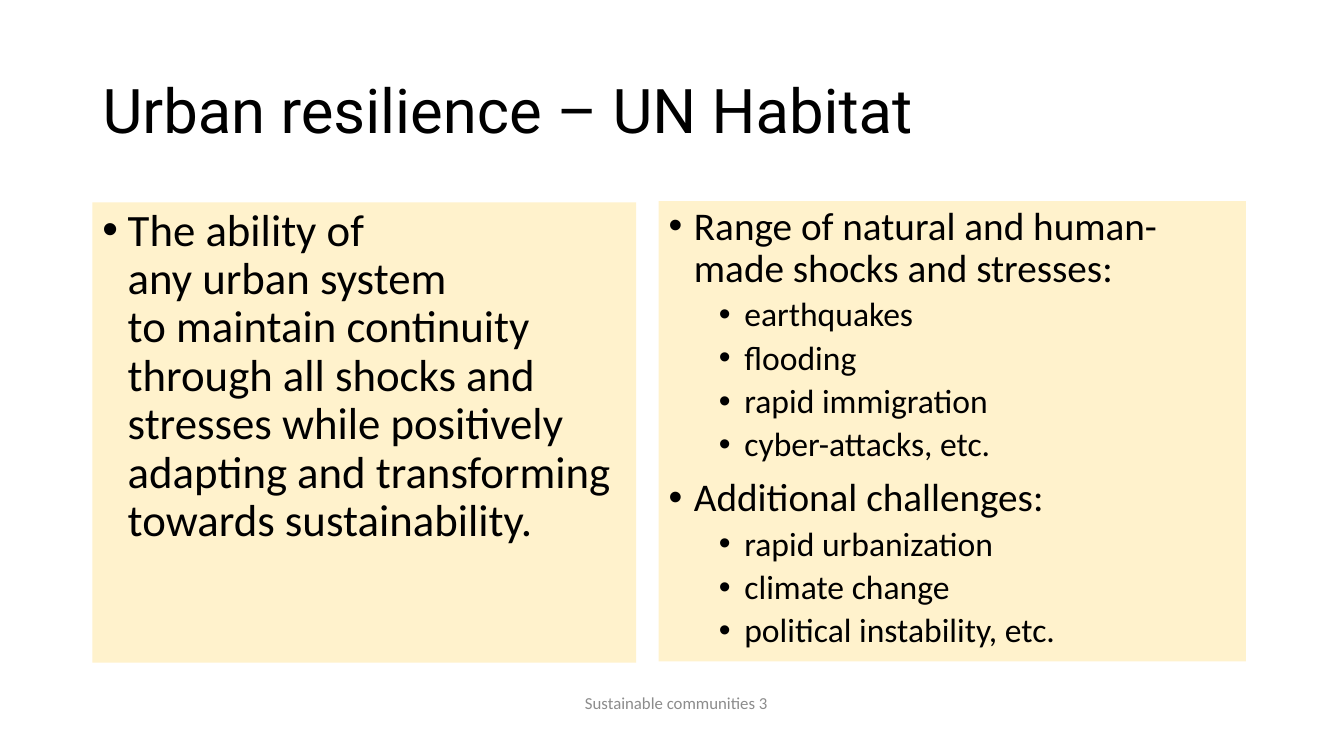
from dataclasses import dataclass

from lxml.etree import SubElement
from pptx import Presentation
from pptx.dml.color import RGBColor
from pptx.enum.shapes import MSO_SHAPE
from pptx.enum.text import MSO_ANCHOR, MSO_AUTO_SIZE, PP_ALIGN
from pptx.oxml.ns import qn
from pptx.util import Cm, Pt


@dataclass(frozen=True)
class Theme:
    text: str = "000000"
    muted: str = "8C8C8C"
    panel: str = "FFF2CC"
    title_font: str = "Roboto"
    body_font: str = "Calibri"
    title: int = 44
    statement: int = 32
    item: int = 28
    subitem: int = 24
    footer: int = 12


def write(p, text, *, size, font, color, align=PP_ALIGN.LEFT, spacing=1.0,
          before=0, level=0, bullet=False):
    """Fill a paragraph; a newline in the text becomes a line break."""
    p.text = text
    p.alignment = align
    p.line_spacing = spacing
    p.space_before = Pt(before)
    p.level = level
    if bullet:
        pPr = p._p.get_or_add_pPr()
        pPr.set("marL", str(Cm(0.64 + 1.27 * level)))
        pPr.set("indent", str(Cm(-0.64)))
        SubElement(pPr, qn("a:buFont"), typeface="Arial")
        SubElement(pPr, qn("a:buChar"), char="•")
    for r in p.runs:
        r.font.size = Pt(size)
        r.font.name = font
        r.font.color.rgb = RGBColor.from_string(color)


class SlideBuilder:
    def __init__(self, prs, theme):
        self.theme = theme
        self.s = prs.slides.add_slide(prs.slide_layouts[5])

    def frame(self, sp, anchor):
        tf = sp.text_frame
        tf.word_wrap = True
        tf.auto_size = MSO_AUTO_SIZE.NONE
        tf.vertical_anchor = anchor
        return tf

    def title(self, text, x, y, w, h):
        sp = self.s.shapes.title
        sp.left, sp.top, sp.width, sp.height = Cm(x), Cm(y), Cm(w), Cm(h)
        tf = self.frame(sp, MSO_ANCHOR.MIDDLE)
        write(tf.paragraphs[0], text, size=self.theme.title,
              font=self.theme.title_font, color=self.theme.text, spacing=0.9)

    def panel(self, items, x, y, w, h, sizes):
        """Draw a filled box of (level, text) bullets, one size per level."""
        sp = self.s.shapes.add_shape(MSO_SHAPE.RECTANGLE, Cm(x), Cm(y), Cm(w), Cm(h))
        sp.shadow.inherit = False
        sp.fill.solid()
        sp.fill.fore_color.rgb = RGBColor.from_string(self.theme.panel)
        sp.line.fill.background()
        tf = self.frame(sp, MSO_ANCHOR.TOP)
        for i, (level, text) in enumerate(items):
            p = tf.add_paragraph() if i else tf.paragraphs[0]
            before = (10, 5)[level] if i else 0
            write(p, text, size=sizes[level], font=self.theme.body_font,
                  color=self.theme.text, spacing=0.9, before=before,
                  level=level, bullet=True)

    def footer(self, text, x, y, w, h):
        sp = self.s.shapes.add_textbox(Cm(x), Cm(y), Cm(w), Cm(h))
        tf = self.frame(sp, MSO_ANCHOR.MIDDLE)
        write(tf.paragraphs[0], text, size=self.theme.footer,
              font=self.theme.body_font, color=self.theme.muted,
              align=PP_ALIGN.CENTER)


DEFINITION = [
    (0, "The ability of \nany urban system \nto maintain continuity \n"
        "through all shocks and stresses while positively adapting and "
        "transforming \ntowards sustainability."),
]
CHALLENGES = [
    (0, "Range of natural and human-made shocks and stresses:"),
    (1, "earthquakes"),
    (1, "flooding"),
    (1, "rapid immigration"),
    (1, "cyber-attacks, etc."),
    (0, "Additional challenges:"),
    (1, "rapid urbanization"),
    (1, "climate change"),
    (1, "political instability, etc."),
]


def main():
    prs = Presentation()
    prs.slide_width, prs.slide_height = Cm(33.87), Cm(19.05)
    theme = Theme()
    slide = SlideBuilder(prs, theme)

    # Title
    slide.title("Urban resilience – UN Habitat", 2.33, 1.01, 29.21, 3.68)

    # Definition on the left, shocks and challenges on the right
    slide.panel(DEFINITION, 2.33, 5.1, 13.7, 11.6, [theme.statement])
    slide.panel(CHALLENGES, 16.6, 5.07, 14.8, 11.6, [theme.item, theme.subitem])

    # Footer
    slide.footer("Sustainable communities 3", 11.33, 17.2, 11.43, 1.01)

    prs.save("out.pptx")


if __name__ == "__main__":
    main()
